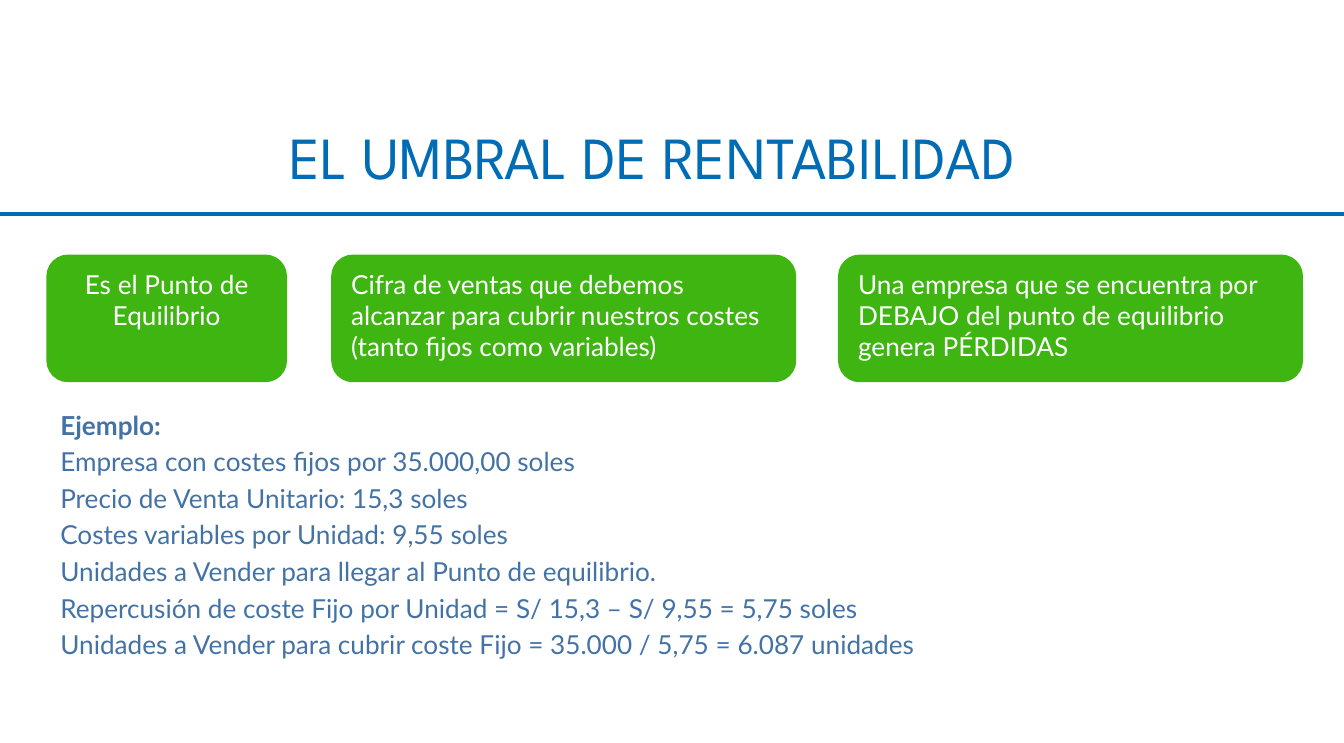
"""Build the break-even point slide."""
from dataclasses import dataclass

from lxml.etree import SubElement
from pptx import Presentation
from pptx.dml.color import RGBColor
from pptx.enum.shapes import MSO_CONNECTOR, MSO_SHAPE
from pptx.enum.text import MSO_ANCHOR, MSO_AUTO_SIZE, PP_ALIGN
from pptx.oxml.ns import qn
from pptx.util import Pt


@dataclass(frozen=True)
class Theme:
    blue: RGBColor = RGBColor.from_string("006CB5")
    slate: RGBColor = RGBColor.from_string("4372A5")
    green: RGBColor = RGBColor.from_string("3FB512")
    white: RGBColor = RGBColor.from_string("FFFFFF")
    title_font: str = "League Spartan"
    body_font: str = "Lato"
    title_size: int = 32
    body_size: int = 14


THEME = Theme()
SLIDE_WIDTH, SLIDE_HEIGHT = 720, 398.16
TITLE = "EL UMBRAL DE RENTABILIDAD"
TITLE_AREA = (20.2, 60.5, 658.8, 46.1)
RULE_TOP = 114.5
CARD_TOP, CARD_HEIGHT = 136.8, 67.7
CARDS = [
    (25.2, 128.2, PP_ALIGN.CENTER, "Es el Punto de Equilibrio"),
    (177.8, 248.4, PP_ALIGN.LEFT,
     "Cifra de ventas que debemos alcanzar para cubrir nuestros costes (tanto fijos como variables)"),
    (449.3, 248.4, PP_ALIGN.LEFT,
     "Una empresa que se encuentra por DEBAJO del punto de equilibrio genera PÉRDIDAS"),
]
EXAMPLE_AREA = (25.2, 176.4, 583.9, 208.8)
EXAMPLE_INSET = 42.8
EXAMPLE = [
    "Ejemplo:",
    "Empresa con costes fijos por 35.000,00 soles",
    "Precio de Venta Unitario: 15,3 soles",
    "Costes variables por Unidad: 9,55 soles",
    "Unidades a Vender para llegar al Punto de equilibrio.",
    "Repercusión de coste Fijo por Unidad = S/ 15,3 – S/ 9,55 = 5,75 soles",
    "Unidades a Vender para cubrir coste Fijo = 35.000 / 5,75 = 6.087 unidades",
]

TITLE_FORMAT = {"name": THEME.title_font, "size": Pt(THEME.title_size)}
BODY_FORMAT = {"name": THEME.body_font, "size": Pt(THEME.body_size)}


def apply(target, values):
    for name, value in values.items():
        setattr(target, name, value)


def write(box, lines, font, color, align=PP_ALIGN.LEFT, space=0, **frame_values):
    frame = box.text_frame
    apply(frame, {"word_wrap": True, "vertical_anchor": MSO_ANCHOR.TOP, **frame_values})
    for index, line in enumerate(lines):
        para = frame.add_paragraph() if index else frame.paragraphs[0]
        apply(para, {"alignment": align, "space_before": Pt(space)})
        span = para.add_run()
        span.text = line
        apply(span.font, font)
        span.font.color.rgb = color


def add_text(page, area, *content, **values):
    box = page.shapes.add_textbox(*map(Pt, area))
    write(box, *content, **values)
    return box


def add_card(page, left, width, align, text):
    card = page.shapes.add_shape(
        MSO_SHAPE.ROUNDED_RECTANGLE, Pt(left), Pt(CARD_TOP), Pt(width), Pt(CARD_HEIGHT))
    card.shadow.inherit = False
    card.fill.solid()
    card.fill.fore_color.rgb = THEME.green
    card.line.color.rgb = THEME.green
    card.line.width = Pt(0.75)
    write(card, [text], BODY_FORMAT, THEME.white, align)


def add_rule(page):
    rule = page.shapes.add_connector(
        MSO_CONNECTOR.STRAIGHT, Pt(0), Pt(RULE_TOP), Pt(SLIDE_WIDTH), Pt(RULE_TOP))
    rule.line.color.rgb = THEME.blue
    rule.line.width = Pt(2)
    SubElement(rule._element.spPr, qn("a:effectLst"))


def main():
    deck = Presentation()
    apply(deck, {"slide_width": Pt(SLIDE_WIDTH), "slide_height": Pt(SLIDE_HEIGHT)})
    page = deck.slides.add_slide(deck.slide_layouts[6])
    example = add_text(page, EXAMPLE_AREA, EXAMPLE, BODY_FORMAT, THEME.slate,
                       space=THEME.body_size * 0.2, margin_top=Pt(EXAMPLE_INSET))
    example.text_frame.paragraphs[0].runs[0].font.bold = True
    for card in CARDS:
        add_card(page, *card)
    add_rule(page)
    add_text(page, TITLE_AREA, [TITLE], TITLE_FORMAT, THEME.blue, PP_ALIGN.CENTER,
             auto_size=MSO_AUTO_SIZE.SHAPE_TO_FIT_TEXT)
    deck.save("out.pptx")


if __name__ == "__main__":
    main()
